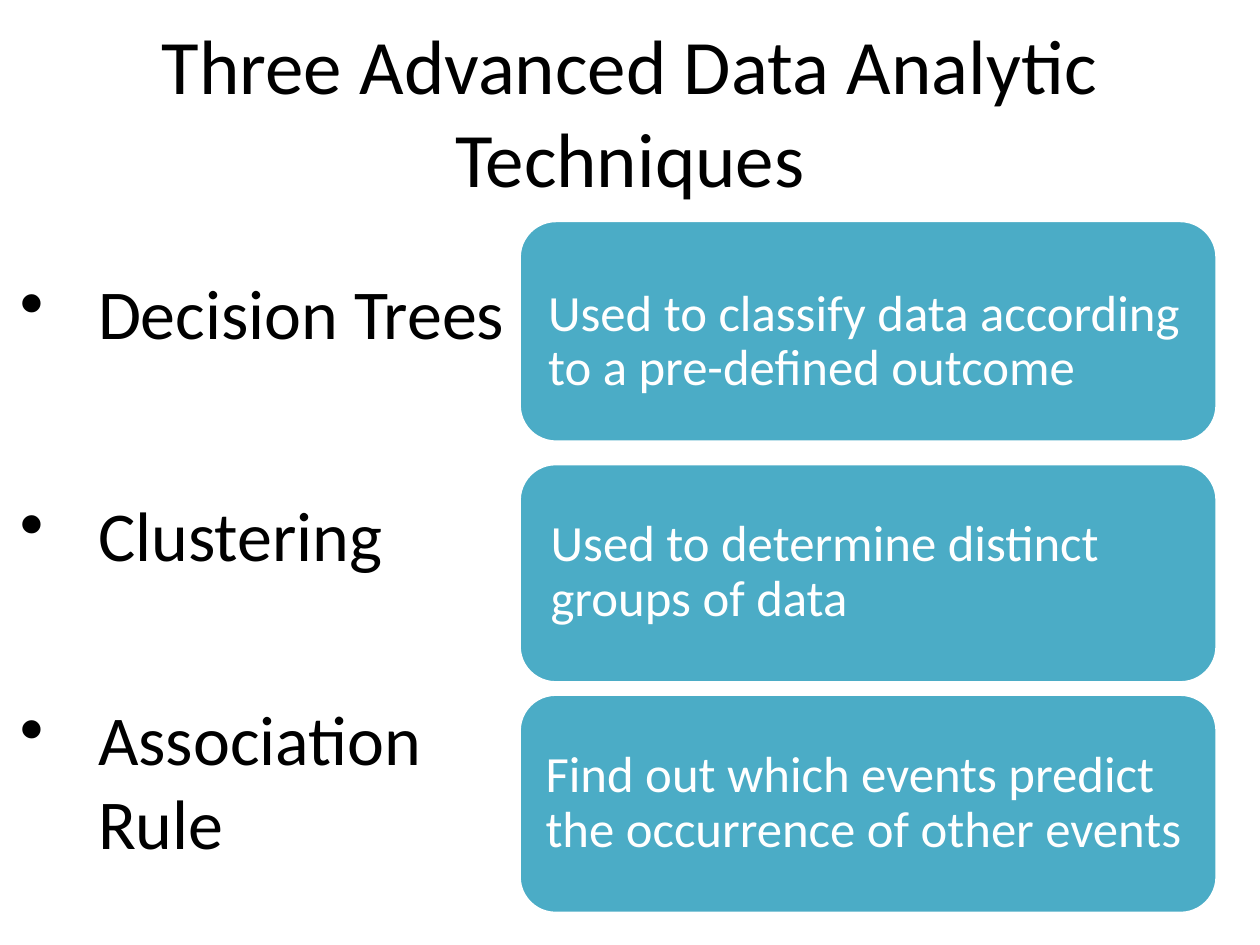
import lxml.etree
import pptx
import pptx.dml.color
import pptx.enum.shapes
import pptx.enum.text
import pptx.oxml.ns
import pptx.util
from pptx.util import Inches

FONT = "Calibri"
BLACK, WHITE, TEAL = "000000", "FFFFFF", "4BACC6"
CARD_LEFT, CARD_WIDTH = 4.12, 5.54
HANGING = 0.62

# label, label box, card top and height, description, description box, inset
TECHNIQUES = [
    ("Decision Trees", (0.06, 2.09, 4.17, 0.77), (1.75, 1.76),
     "Used to classify data according to a pre-defined outcome",
     (4.27, 1.92, 5.39, 1.59), 0.08),
    ("Clustering", (0.06, 3.85, 3.78, 0.77), (3.68, 1.74),
     "Used to determine distinct groups of data",
     (4.25, 3.76, 5.29, 1.57), 0.12),
    ("Association Rule", (0.06, 5.47, 4.17, 1.45), (5.51, 1.74),
     "Find out which events predict the occurrence of other events",
     (4.21, 5.59, 5.36, 1.57), 0.12),
]


def rgb(color):
    return pptx.dml.color.RGBColor.from_string(color)


def add_text(shapes, text, box, size, color):
    frame = shapes.add_textbox(*map(Inches, box)).text_frame
    frame.word_wrap = True
    frame.text = text
    font = frame.paragraphs[0].runs[0].font
    font.name = FONT
    font.size = pptx.util.Pt(size)
    font.color.rgb = rgb(color)
    return frame


def add_title(slide, text):
    frame = add_text(slide.shapes, text, (0.5, 0.25, 9, 1.25), 44, BLACK)
    frame.vertical_anchor = pptx.enum.text.MSO_ANCHOR.MIDDLE
    frame.paragraphs[0].alignment = pptx.enum.text.PP_ALIGN.CENTER


def add_card(slide, top, height, description, box, inset):
    """Rounded panel grouped with its description."""
    group = slide.shapes.add_group_shape()
    panel = group.shapes.add_shape(
        pptx.enum.shapes.MSO_SHAPE.ROUNDED_RECTANGLE,
        Inches(CARD_LEFT), Inches(top), Inches(CARD_WIDTH), Inches(height))
    panel.shadow.inherit = False
    panel.fill.solid()
    panel.fill.fore_color.rgb = rgb(TEAL)
    panel.line.color.rgb = rgb(WHITE)
    panel.line.width = pptx.util.Pt(2)

    frame = add_text(group.shapes, description, box, 29, WHITE)
    frame.vertical_anchor = pptx.enum.text.MSO_ANCHOR.MIDDLE
    frame.margin_left = frame.margin_right = Inches(inset)
    frame.margin_top = frame.margin_bottom = Inches(inset)
    frame.paragraphs[0].line_spacing = 0.9


def add_bullet_label(slide, label, box):
    frame = add_text(slide.shapes, label, box, 40, BLACK)
    frame.auto_size = pptx.enum.text.MSO_AUTO_SIZE.SHAPE_TO_FIT_TEXT
    properties = frame.paragraphs[0]._p.get_or_add_pPr()
    properties.set("marL", str(Inches(HANGING)))
    properties.set("indent", str(Inches(-HANGING)))
    bullet = lxml.etree.SubElement(properties, pptx.oxml.ns.qn("a:buChar"))
    bullet.set("char", "•")


def main():
    deck = pptx.Presentation()
    deck.slide_width, deck.slide_height = Inches(10), Inches(7.5)
    slide = deck.slides.add_slide(deck.slide_layouts[6])
    add_title(slide, "Three Advanced Data Analytic Techniques")
    for _, _, (top, height), description, box, inset in TECHNIQUES:
        add_card(slide, top, height, description, box, inset)
    for label, box, *_ in TECHNIQUES:
        add_bullet_label(slide, label, box)
    deck.save("out.pptx")


if __name__ == "__main__":
    main()
